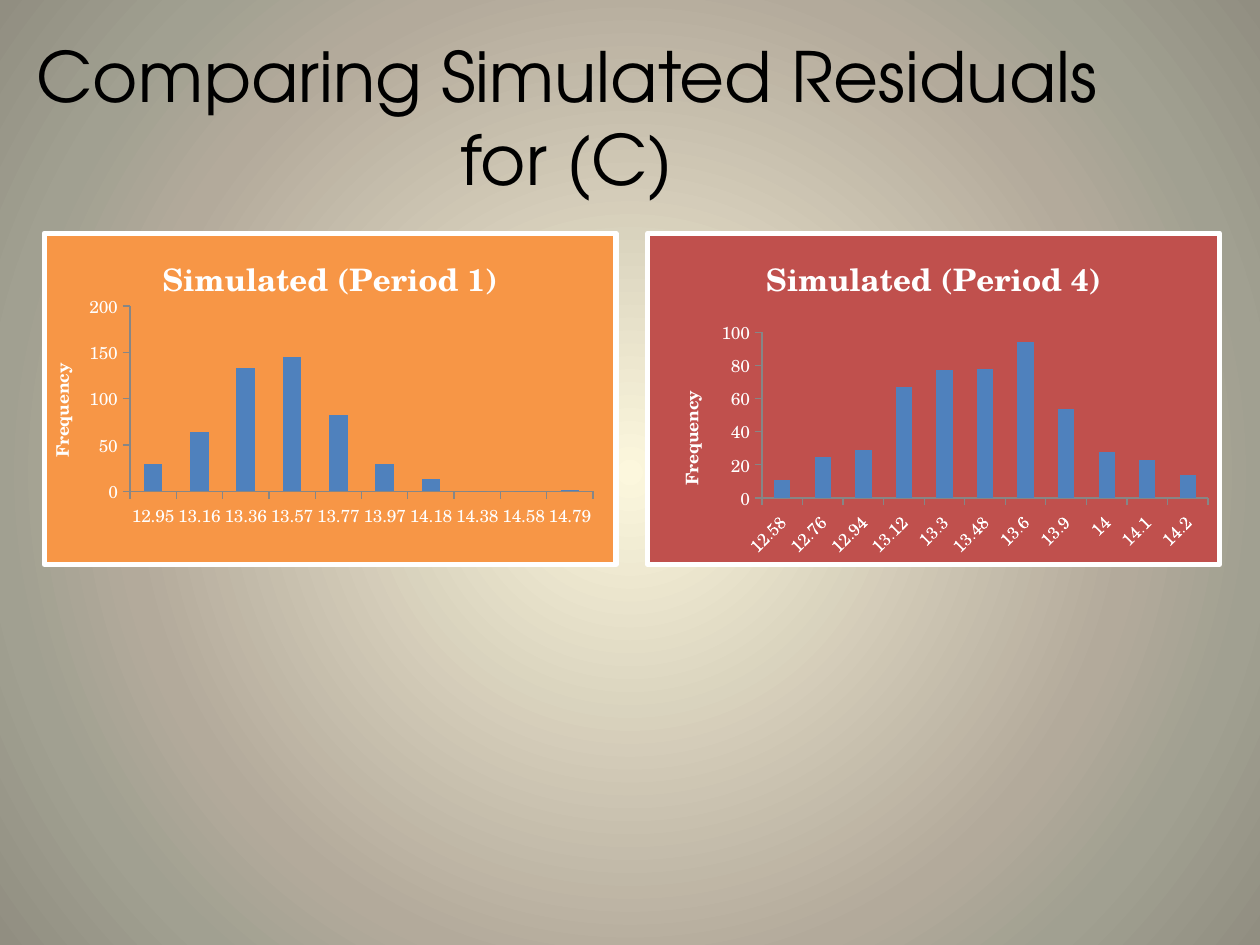
from lxml import etree
from pptx import Presentation
from pptx.chart.data import CategoryChartData
from pptx.dml.color import RGBColor
from pptx.enum.chart import XL_CHART_TYPE as ChartType, XL_TICK_MARK as TickMark
from pptx.enum.text import MSO_ANCHOR as Anchor, PP_ALIGN as Align
from pptx.oxml import parse_xml
from pptx.oxml.ns import nsdecls, qn
from pptx.util import Inches, Pt

BLACK = RGBColor(0x00, 0x00, 0x00)
WHITE = RGBColor(0xFF, 0xFF, 0xFF)
GREY = RGBColor(0x86, 0x86, 0x86)
BLUE = RGBColor(0x4F, 0x81, 0xBD)
ORANGE = RGBColor(0xF7, 0x96, 0x46)
RED = RGBColor(0xC0, 0x50, 0x4D)
GLOW = {
    0: RGBColor(0xFC, 0xF7, 0xDD),
    64: RGBColor(0xB3, 0xAA, 0x9B),
    80: RGBColor(0xA1, 0xA0, 0x91),
    100: RGBColor(0x91, 0x8E, 0x81),
}
HEAD_FONT = "TeX Gyre Adventor"
CHART_FONT = "TeX Gyre Schola"

PERIODS = [
    {
        "title": "Simulated (Period 1)",
        "fill": ORANGE,
        "layout": {"x": 0.15, "y": 0.22, "w": 0.81, "h": 0.56},
        "turn": 0,
        "bins": {"12.95": 30, "13.16": 64, "13.36": 133, "13.57": 145, "13.77": 82,
                 "13.97": 30, "14.18": 13, "14.38": 0, "14.58": 0, "14.79": 1},
    },
    {
        "title": "Simulated (Period 4)",
        "fill": RED,
        "layout": {"x": 0.2, "y": 0.3, "w": 0.78, "h": 0.5},
        "turn": -45,
        "bins": {"12.58": 11, "12.76": 25, "12.94": 29, "13.12": 67, "13.3": 77,
                 "13.48": 78, "13.6": 94, "13.9": 54, "14": 28, "14.1": 23, "14.2": 14},
    },
]


def apply_format(target, values):
    """Set each attribute of the target from a dict."""
    for name, value in values.items():
        setattr(target, name, value)


def style_font(font, color, **values):
    """Give a font its format values and colour."""
    apply_format(font, values)
    font.color.rgb = color


def paint_background(page):
    """Fill the page with a circular gradient from its centre."""
    page.background.fill.gradient()
    fill = page.background._cSld.find(".//" + qn("a:gradFill"))
    stops = "".join(
        f'<a:gs pos="{place * 1000}"><a:srgbClr val="{color}"/></a:gs>'
        for place, color in GLOW.items()
    )
    fill.getparent().replace(fill, parse_xml(
        f'<a:gradFill {nsdecls("a")} rotWithShape="1"><a:gsLst>{stops}</a:gsLst>'
        '<a:path path="circle">'
        '<a:fillToRect l="50000" t="50000" r="50000" b="50000"/></a:path></a:gradFill>'
    ))


def add_heading(page, text, *area):
    """Place the centred heading in its area."""
    box = page.shapes.add_textbox(*area)
    apply_format(box.text_frame, {"word_wrap": True, "vertical_anchor": Anchor.MIDDLE})
    para = box.text_frame.paragraphs[0]
    para.alignment = Align.CENTER
    span = para.add_run()
    span.text = text
    style_font(span.font, BLACK, name=HEAD_FONT, size=Pt(39.6))


def set_title(owner, text, size):
    """Write a bold white title on a chart or an axis."""
    frame = (owner.chart_title if hasattr(owner, "chart_title") else owner.axis_title).text_frame
    frame.text = text
    style_font(frame.paragraphs[0].runs[0].font, WHITE,
               name=CHART_FONT, size=Pt(size), bold=True)


def frame_chart(chart, color, layout):
    """Colour the chart area, border it in white and fix the inner plot area."""
    space = chart._chartSpace
    space.find(qn("c:chart")).addnext(parse_xml(
        f'<c:spPr {nsdecls("c", "a")}>'
        f'<a:solidFill><a:srgbClr val="{color}"/></a:solidFill>'
        f'<a:ln w="{Pt(3)}"><a:solidFill><a:srgbClr val="{WHITE}"/></a:solidFill></a:ln>'
        '</c:spPr>'
    ))
    plot_area = space.find(".//" + qn("c:plotArea"))
    for old in plot_area.findall(qn("c:layout")):
        plot_area.remove(old)
    holder = parse_xml(f'<c:layout {nsdecls("c")}><c:manualLayout/></c:layout>')
    parts = {"layoutTarget": "inner", "xMode": "edge", "yMode": "edge", **layout}
    for name, value in parts.items():
        etree.SubElement(holder[0], qn("c:" + name)).set("val", str(value))
    plot_area.insert(0, holder)


def add_histogram(page, period, *area):
    """Place one frequency chart in its area."""
    data = CategoryChartData()
    data.categories = list(period["bins"])
    data.add_series("Series 1", list(period["bins"].values()))
    chart = page.shapes.add_chart(ChartType.COLUMN_CLUSTERED, *area, data).chart
    chart.has_legend = False
    style_font(chart.font, WHITE, name=CHART_FONT, size=Pt(10))
    set_title(chart, period["title"], 18)
    apply_format(chart.plots[0], {"gap_width": 150, "vary_by_categories": False})
    bars = chart.plots[0].series[0].format.fill
    bars.solid()
    bars.fore_color.rgb = BLUE
    for axis in (chart.category_axis, chart.value_axis):
        apply_format(axis, {"has_major_gridlines": False,
                            "major_tick_mark": TickMark.OUTSIDE,
                            "minor_tick_mark": TickMark.NONE})
        axis.format.line.color.rgb = GREY
        style_font(axis.tick_labels.font, WHITE, name=CHART_FONT, size=Pt(10))
    set_title(chart.value_axis, "Frequency", 10)
    label_body = chart.category_axis._element.find(qn("c:txPr")).find(qn("a:bodyPr"))
    label_body.set("rot", str(period["turn"] * 60000))
    frame_chart(chart, period["fill"], period["layout"])


def main():
    """Build the slide and save it."""
    deck = Presentation()
    apply_format(deck, {"slide_width": Inches(10), "slide_height": Inches(7.5)})
    page = deck.slides.add_slide(deck.slide_layouts[6])
    paint_background(page)
    add_heading(page, "Comparing Simulated Residuals for (C)",
                Inches(0), Inches(0.3), Inches(9), Inches(1.25))
    for index, period in enumerate(PERIODS):
        add_histogram(page, period, Inches(0.33 + index * 4.79), Inches(1.83),
                      Inches(4.58), Inches(2.67))
    deck.save("out.pptx")


if __name__ == "__main__":
    main()
